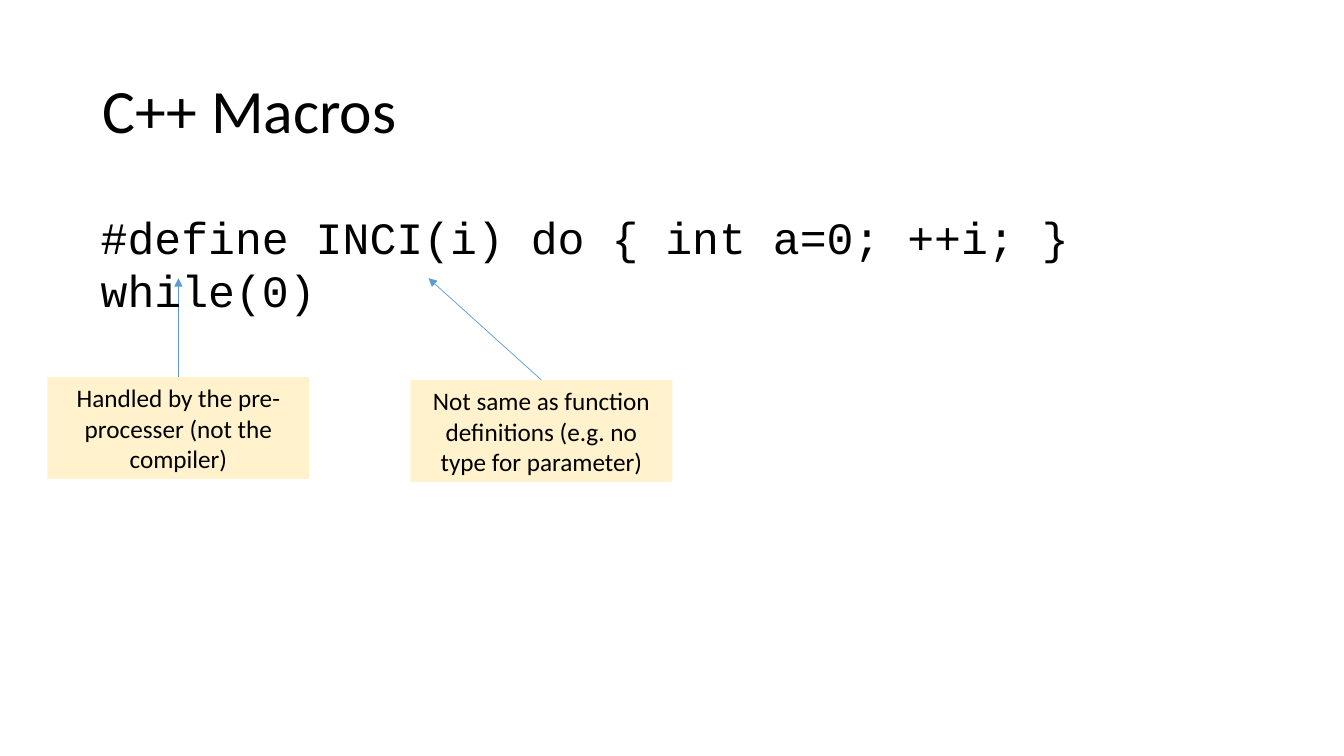
import pptx
import pptx.util
import pptx.dml.color
import pptx.enum.shapes
import pptx.enum.text
from lxml import etree
from pptx.util import Inches

ANCHOR = pptx.enum.text.MSO_ANCHOR
ALIGN = pptx.enum.text.PP_ALIGN

TITLE = ("C++ Macros", (0.92, 0.4, 11.5, 1.45),
         {"name": "Calibri", "size": 44}, {"line_spacing": 0.9})
CODE = ("#define INCI(i) do { int a=0; ++i; } while(0)", (0.9, 2.29, 11.43, 0.64),
        {"name": "Courier New", "size": 32}, {})

# text, left and top of the note, point its arrow leads to
NOTES = [
    ("Handled by the pre-processer (not the compiler)", (0.47, 3.74), (1.77, 2.76)),
    ("Not same as function definitions (e.g. no type for parameter)",
     (4.07, 3.77), (4.25, 2.76)),
]
NOTE_WIDTH, NOTE_HEIGHT = 2.6, 1.01
NOTE_FONT = {"name": "Calibri", "size": 18}
TEXT_COLOUR, NOTE_FILL, ARROW_COLOUR = "000000", "FFF2CC", "5B9BD5"


def colour(value):
    return pptx.dml.color.RGBColor.from_string(value)


def write(shape, text, font, layout):
    frame = shape.text_frame
    frame.word_wrap = True
    frame.vertical_anchor = ANCHOR.MIDDLE
    para = frame.paragraphs[0]
    for key, value in layout.items():
        setattr(para, key, value)
    span = para.add_run()
    span.text = text
    for key, value in {**font, "size": pptx.util.Pt(font["size"])}.items():
        setattr(span.font, key, value)
    span.font.color.rgb = colour(TEXT_COLOUR)


def add_text(page, text, place, font, layout):
    write(page.shapes.add_textbox(*map(Inches, place)), text, font, layout)


def add_note(page, text, left, top):
    box = page.shapes.add_shape(
        pptx.enum.shapes.MSO_SHAPE.RECTANGLE,
        *map(Inches, (left, top, NOTE_WIDTH, NOTE_HEIGHT)))
    box.shadow.inherit = False
    box.fill.solid()
    box.fill.fore_color.rgb = colour(NOTE_FILL)
    box.line.fill.background()
    write(box, text, NOTE_FONT, {"alignment": ALIGN.CENTER})


def add_arrow(page, start, end):
    arrow = page.shapes.add_connector(
        pptx.enum.shapes.MSO_CONNECTOR.STRAIGHT, *map(Inches, start + end))
    arrow.line.color.rgb = colour(ARROW_COLOUR)
    arrow.line.width = pptx.util.Pt(0.5)
    head = etree.SubElement(arrow.line._get_or_add_ln(), pptx.oxml.ns.qn("a:tailEnd"))
    head.set("type", "triangle")
    etree.SubElement(arrow._element.spPr, pptx.oxml.ns.qn("a:effectLst"))


def main():
    deck = pptx.Presentation()
    deck.slide_width, deck.slide_height = Inches(13.33), Inches(7.5)
    page = deck.slides.add_slide(deck.slide_layouts[6])
    add_text(page, *TITLE)
    for text, (left, top), target in NOTES:
        add_note(page, text, left, top)
        add_arrow(page, (left + NOTE_WIDTH / 2, top), target)
    add_text(page, *CODE)
    deck.save("out.pptx")


if __name__ == "__main__":
    main()
